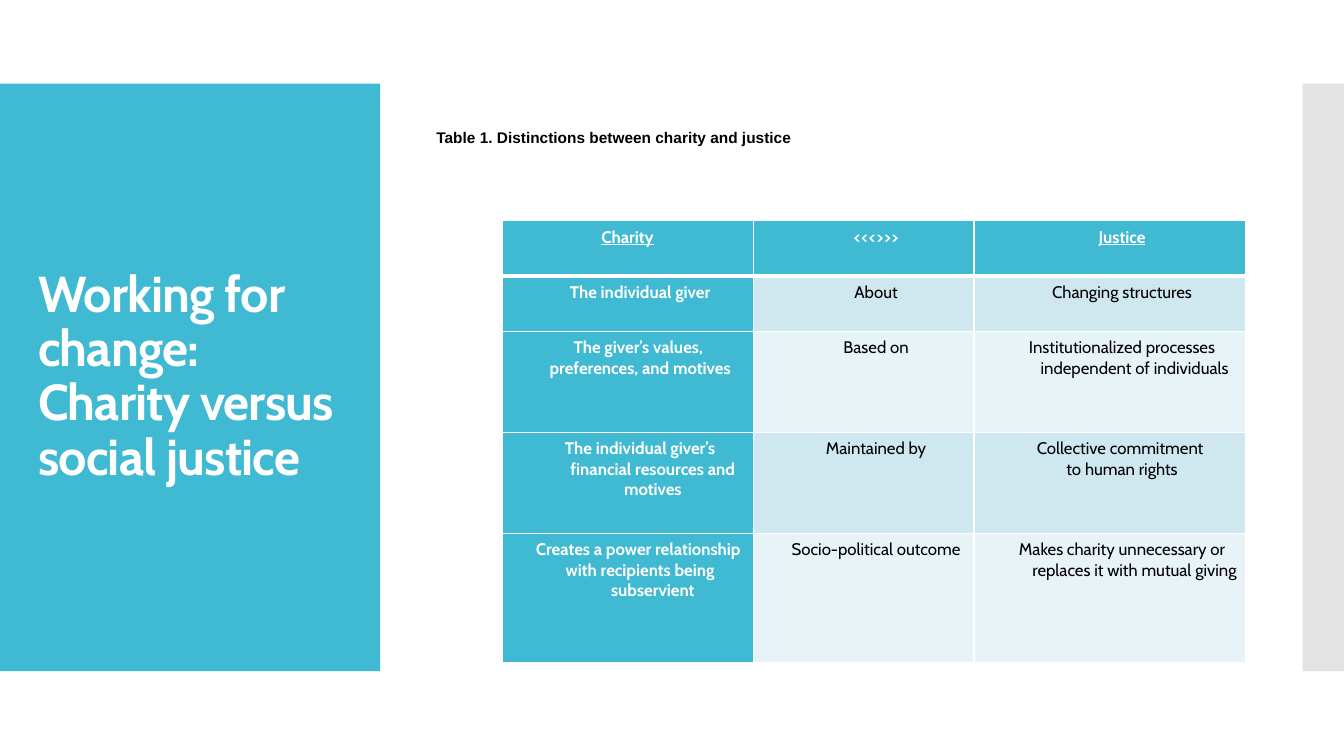
"""Build a slide with a table that sets charity against social justice."""
from lxml.etree import SubElement
from pptx import Presentation
from pptx.dml.color import RGBColor
from pptx.enum.shapes import MSO_SHAPE
from pptx.enum.text import MSO_ANCHOR, PP_ALIGN
from pptx.oxml.ns import qn
from pptx.util import Inches, Pt

TEAL = RGBColor(0x40, 0xBA, 0xD2)
GREY = RGBColor(0xC8, 0xC8, 0xC8)
PALE_BLUE = RGBColor(0xCF, 0xE7, 0xEE)
PALER_BLUE = RGBColor(0xE8, 0xF3, 0xF7)
WHITE = RGBColor(0xFF, 0xFF, 0xFF)
BLACK = RGBColor(0, 0, 0)


def write(frame, text, size=12, font="Cabin", color=BLACK, bold=False,
          underline=False, align=PP_ALIGN.LEFT, hanging=False):
    frame.word_wrap = True
    frame.text = text
    for paragraph in frame.paragraphs:
        paragraph.alignment = align
        if hanging:
            properties = paragraph._p.get_or_add_pPr()
            properties.set("marL", str(Inches(0.25)))
            properties.set("indent", str(Inches(-0.25)))
        for run in paragraph.runs:
            run.font.size = Pt(size)
            run.font.name = font
            run.font.color.rgb = color
            run.font.bold = bold
            run.font.underline = underline


def add_border(cell, side, width):
    line = SubElement(cell._tc.get_or_add_tcPr(), qn(f"a:{side}"), w=str(Pt(width)))
    fill = SubElement(line, qn("a:solidFill"))
    SubElement(fill, qn("a:srgbClr"), val=str(WHITE))


presentation = Presentation()
presentation.slide_width = Inches(13.33)
presentation.slide_height = Inches(7.5)
slide = presentation.slides.add_slide(presentation.slide_layouts[6])

for left, width, color in [(0, 3.77, TEAL), (12.92, 0.41, GREY)]:
    panel = slide.shapes.add_shape(
        MSO_SHAPE.RECTANGLE, Inches(left), Inches(0.83), Inches(width), Inches(5.83))
    panel.shadow.inherit = False
    panel.fill.solid()
    panel.fill.fore_color.rgb = color
    panel.line.fill.background()
    if color == GREY:
        grey_element = panel._element.spPr.find(qn("a:solidFill"))[0]
        SubElement(grey_element, qn("a:alpha"), val="50000")

title = slide.shapes.add_textbox(Inches(0.28), Inches(1.23), Inches(3.22), Inches(5.03))
title_frame = title.text_frame
title_frame.vertical_anchor = MSO_ANCHOR.MIDDLE
write(title_frame, "Working for change: Charity versus social justice",
      size=36, color=WHITE, bold=True)
title_paragraph = title_frame.paragraphs[0]
title_paragraph.line_spacing = 0.9
title_paragraph.runs[0].font._element.set("spc", "-60")

rows = [
    ("Charity", "<<<>>>", "Justice"),
    ("The individual giver", "About", "Changing structures"),
    ("The giver’s values, \npreferences, and motives", "Based on",
     "Institutionalized processes independent of individuals"),
    ("The individual giver’s financial resources and motives", "Maintained by",
     "Collective commitment \nto human rights"),
    ("Creates a power relationship \nwith recipients being subservient",
     "Socio-political outcome",
     "Makes charity unnecessary or replaces it with mutual giving"),
]
column_widths = [2.49, 2.19, 2.69]
row_heights = [0.55, 0.55, 1, 1, 1.28]
table = slide.shapes.add_table(
    len(rows), len(column_widths), Inches(4.98), Inches(2.19),
    Inches(sum(column_widths)), Inches(sum(row_heights))).table
for column, width in zip(table.columns, column_widths):
    column.width = Inches(width)
for row, height in zip(table.rows, row_heights):
    row.height = Inches(height)

for row_index, texts in enumerate(rows):
    for column_index, text in enumerate(texts):
        cell = table.cell(row_index, column_index)
        is_header = row_index == 0
        is_teal = is_header or column_index == 0
        is_hanging = not (is_header and column_index == 0)
        cell.margin_left = Inches(0.31 if is_hanging else 0.06)
        cell.margin_right = cell.margin_top = cell.margin_bottom = Inches(0.06)
        add_border(cell, "lnL", 1)
        add_border(cell, "lnR", 1)
        add_border(cell, "lnT", 3 if row_index == 1 else 1)
        add_border(cell, "lnB", 3 if is_header else 1)
        cell.fill.solid()
        band = PALE_BLUE if row_index % 2 else PALER_BLUE
        cell.fill.fore_color.rgb = TEAL if is_teal else band
        write(cell.text_frame, text, color=WHITE if is_teal else BLACK, bold=is_teal,
              underline=is_header and column_index != 1,
              align=PP_ALIGN.CENTER, hanging=is_hanging)

caption = slide.shapes.add_textbox(Inches(4.23), Inches(1.25), Inches(8), Inches(0.5))
caption.text_frame.margin_top = Inches(0.02)
write(caption.text_frame, "Table 1. Distinctions between charity and justice",
      size=11, font="Arial", bold=True)

presentation.save("out.pptx")
